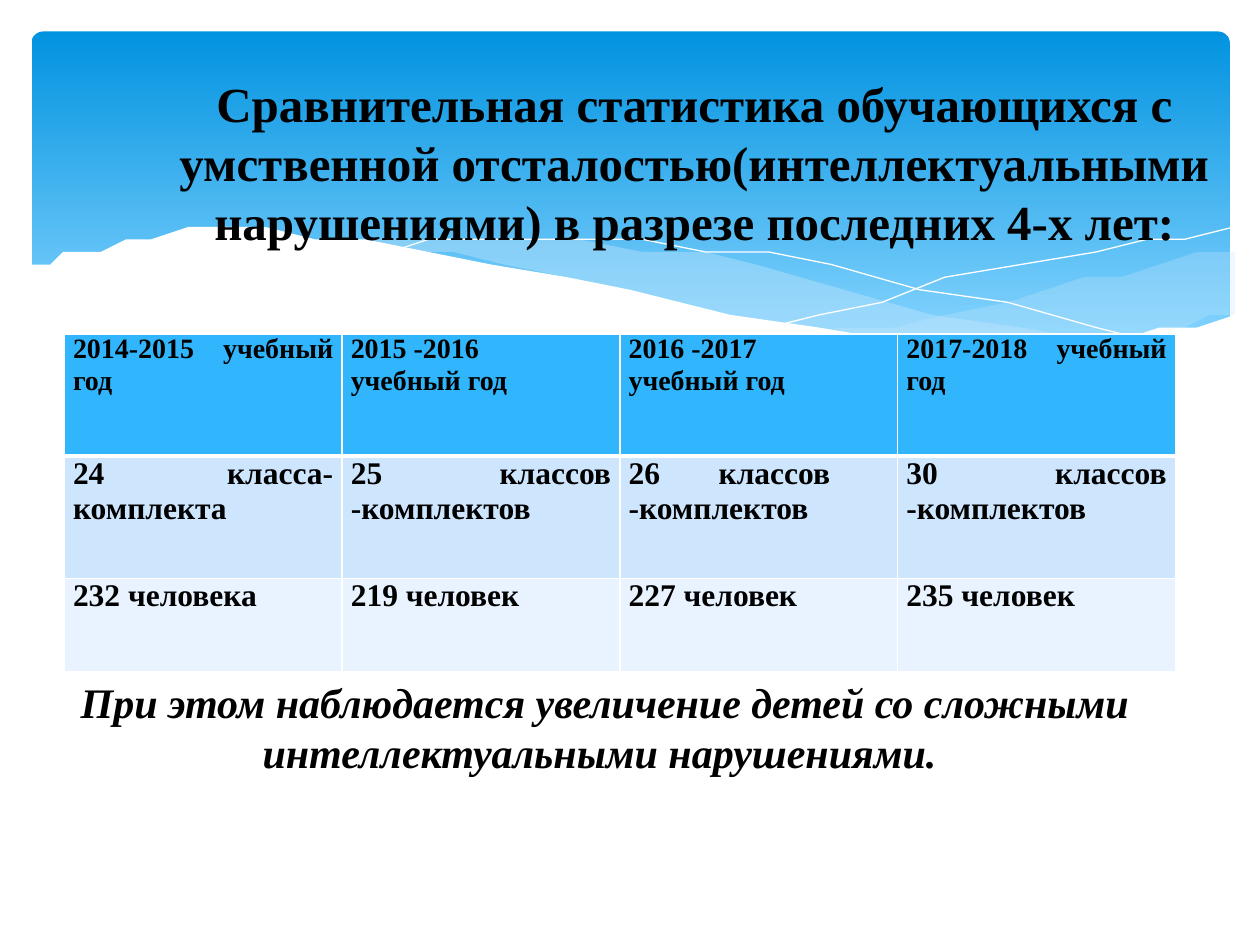
from lxml import etree
from pptx import Presentation
from pptx import util as u
from pptx.dml.color import RGBColor
from pptx.enum import shapes, text
from pptx.oxml import ns

COLORS = {
    "ink": "000000", "white": "FFFFFF", "sky": "0293E0", "pale": "83D3FE",
    "mist": "C6E7FC", "header": "31B6FD", "band": "CEE5FE", "light": "E8F3FF",
}
FONT = "Times New Roman"
COLUMNS, ROWS = 100, 75

RIGHT_WAVE = [
    (97.6, 19.9), (94.8, 20.4), (92.1, 20.9), (89.1, 21.6), (86.1, 22.3),
    (80.5, 23.7), (75.3, 24.8), (70.6, 25.7), (66.1, 26.5), (69.1, 26.9),
    (73.2, 27.4), (76.9, 27.7), (80.3, 27.8), (83.5, 27.7), (87.2, 27.4),
    (90.5, 26.9), (93.5, 26.1), (96.3, 25.2), (97.6, 24.7),
]
MIDDLE_WAVE = [
    (89.3, 27.3), (86.6, 26.9), (80.7, 26), (74.1, 24.8), (66.8, 23.1),
    (59.8, 21.4), (55.5, 20.5), (51.4, 19.8), (46.5, 19.1), (42, 18.7),
    (38, 18.6), (34.4, 18.6), (31.3, 18.8), (28.6, 19.1), (32.3, 19.6),
    (36.2, 20.3), (40.4, 21.1), (44.9, 22.2), (53, 24), (60.1, 25.5),
    (65, 26.4), (69.5, 27), (73.6, 27.5), (77.3, 27.7), (80.7, 27.8),
    (83.8, 27.8), (86.7, 27.6), (89.3, 27.3),
]
FALLING_LINE = [
    (30.9, 19.5), (33.5, 19.1), (36.3, 18.9), (40.1, 18.7), (43.3, 18.7),
    (46.9, 18.9), (51, 19.2), (55.6, 19.7), (60.8, 20.4), (66.5, 21.3),
    (72.7, 22.6), (79.5, 24.1), (86.8, 26.1), (90.7, 27.2),
]
RISING_LINE = [
    (61.3, 25.7), (65.2, 24.6), (69.5, 23.5), (74.8, 22.3), (80.6, 21),
    (86.6, 19.9), (91, 19.2), (93.8, 18.8), (97.5, 18.5),
]
WHITE_WAVE = [
    (97.7, 24.6), (95, 25.6), (92, 26.5), (88.7, 27.1), (85, 27.5),
    (80.9, 27.7), (76.1, 27.5), (70.8, 27), (64.7, 26.2), (57.9, 25),
    (50.3, 23.3), (44.7, 22), (39.1, 20.7), (33.9, 19.7), (29.2, 19.1),
    (25, 18.6), (21.1, 18.4), (17.7, 18.4), (14.6, 18.5), (11.9, 18.7),
    (9.5, 19.1), (7.5, 19.5), (5.9, 19.9), (4.6, 20.3), (3.6, 20.7),
    (2.3, 21.3), (2.3, 32.9), (97.7, 32.9),
]
TABLE_ROWS = [
    ["2014-2015 учебный год", "2015 -2016\nучебный год",
     "2016 -2017\nучебный год", "2017-2018 учебный год"],
    ["24 класса-комплекта", "25 классов -комплектов",
     "26 классов  -комплектов", "30 классов -комплектов"],
    ["232 человека", "219 человек", "227 человек", "235 человек"],
]


class Page:
    """Draws styled elements on one slide, measured in grid columns and rows."""

    def __init__(self, deck):
        self.slide = deck.slides.add_slide(deck.slide_layouts[6])
        self.column = deck.slide_width / COLUMNS
        self.row = deck.slide_height / ROWS

    def place(self, left, top, width, height):
        return (round(left * self.column), round(top * self.row),
                round(width * self.column), round(height * self.row))

    def color(self, name):
        return RGBColor.from_string(COLORS[name])

    def panel(self, area, radius, top_color, bottom_color):
        box = self.slide.shapes.add_shape(
            shapes.MSO_SHAPE.ROUNDED_RECTANGLE, *self.place(*area))
        box.shadow.inherit = False
        box.adjustments[0] = radius
        box.line.fill.background()
        box.fill.gradient()
        box.fill.gradient_angle = 270
        stops = zip(box.fill.gradient_stops, (top_color, bottom_color), (0, 0.9))
        for stop, name, position in stops:
            stop.color.rgb = self.color(name)
            stop.position = position

    def outline(self, points, closed):
        builder = self.slide.shapes.build_freeform(
            *points[0], scale=(self.column, self.row))
        builder.add_line_segments(points[1:], close=closed)
        shape = builder.convert_to_shape()
        shape.shadow.inherit = False
        return shape

    def wave(self, points, name, opacity=100):
        shape = self.outline(points, True)
        shape.line.fill.background()
        shape.fill.solid()
        shape.fill.fore_color.rgb = self.color(name)
        if opacity < 100:
            tint = shape._element.spPr.find(".//" + ns.qn("a:srgbClr"))
            etree.SubElement(tint, ns.qn("a:alpha"), val=str(opacity * 1000))

    def curve(self, points):
        shape = self.outline(points, False)
        shape.fill.background()
        shape.line.color.rgb = self.color("white")
        shape.line.width = 0

    def fill_text(self, frame, words, size, align, italic=False):
        frame.text = words
        for para in frame.paragraphs:
            para.alignment = align
            para.font.name = FONT
            para.font.size = u.Pt(size)
            para.font.bold = True
            para.font.italic = italic
            para.font.color.rgb = self.color("ink")

    def label(self, area, words, size, anchor, italic=False):
        box = self.slide.shapes.add_textbox(*self.place(*area))
        frame = box.text_frame
        frame.word_wrap = True
        frame.vertical_anchor = anchor
        self.fill_text(frame, words, size, text.PP_ALIGN.CENTER, italic)

    def borders(self, cell, bottom):
        properties = cell._tc.get_or_add_tcPr()
        widths = {"lnL": 1, "lnR": 1, "lnT": 1, "lnB": bottom}
        for index, (side, width) in enumerate(widths.items()):
            line = etree.Element(ns.qn("a:" + side), w=str(int(u.Pt(width))))
            fill = etree.SubElement(line, ns.qn("a:solidFill"))
            etree.SubElement(fill, ns.qn("a:srgbClr"), val=COLORS["white"])
            properties.insert(index, line)

    def table(self, area, rows, heights, fills, sizes):
        grid = self.slide.shapes.add_table(
            len(rows), len(rows[0]), *self.place(*area)).table
        for r, words_in_row in enumerate(rows):
            grid.rows[r].height = round(heights[r] * self.row)
            for c, words in enumerate(words_in_row):
                cell = grid.cell(r, c)
                cell.margin_left = cell.margin_right = u.Inches(0.07)
                cell.margin_top = cell.margin_bottom = 0
                cell.fill.solid()
                cell.fill.fore_color.rgb = self.color(fills[r])
                self.fill_text(cell.text_frame, words, sizes[r],
                               text.PP_ALIGN.JUSTIFY)
                self.borders(cell, 3 if r == 0 else 1)


def main():
    deck = Presentation()
    deck.slide_width, deck.slide_height = u.Inches(10), u.Inches(7.5)
    page = Page(deck)
    page.panel((2.5, 2.5, 95.1, 27), 0.034, "sky", "pale")
    page.wave(RIGHT_WAVE, "mist", 29)
    page.wave(MIDDLE_WAVE, "mist", 40)
    page.curve(FALLING_LINE)
    page.curve(RISING_LINE)
    page.wave(WHITE_WAVE, "white")
    page.table((5.1, 26.5, 88.2, 26.8), TABLE_ROWS, (9.7, 9.7, 7.4),
               ("header", "band", "light"), (16, 18, 18))
    page.label((10.1, 6, 90, 13.7),
               "Сравнительная статистика обучающихся с умственной "
               "отсталостью(интеллектуальными нарушениями) в разрезе "
               "последних 4-х лет:", 28, text.MSO_ANCHOR.MIDDLE)
    page.label((4.3, 53.2, 87.4, 9.1),
               "При этом наблюдается увеличение детей со сложными "
               "интеллектуальными нарушениями. ", 24,
               text.MSO_ANCHOR.TOP, italic=True)
    deck.save("out.pptx")


if __name__ == "__main__":
    main()
